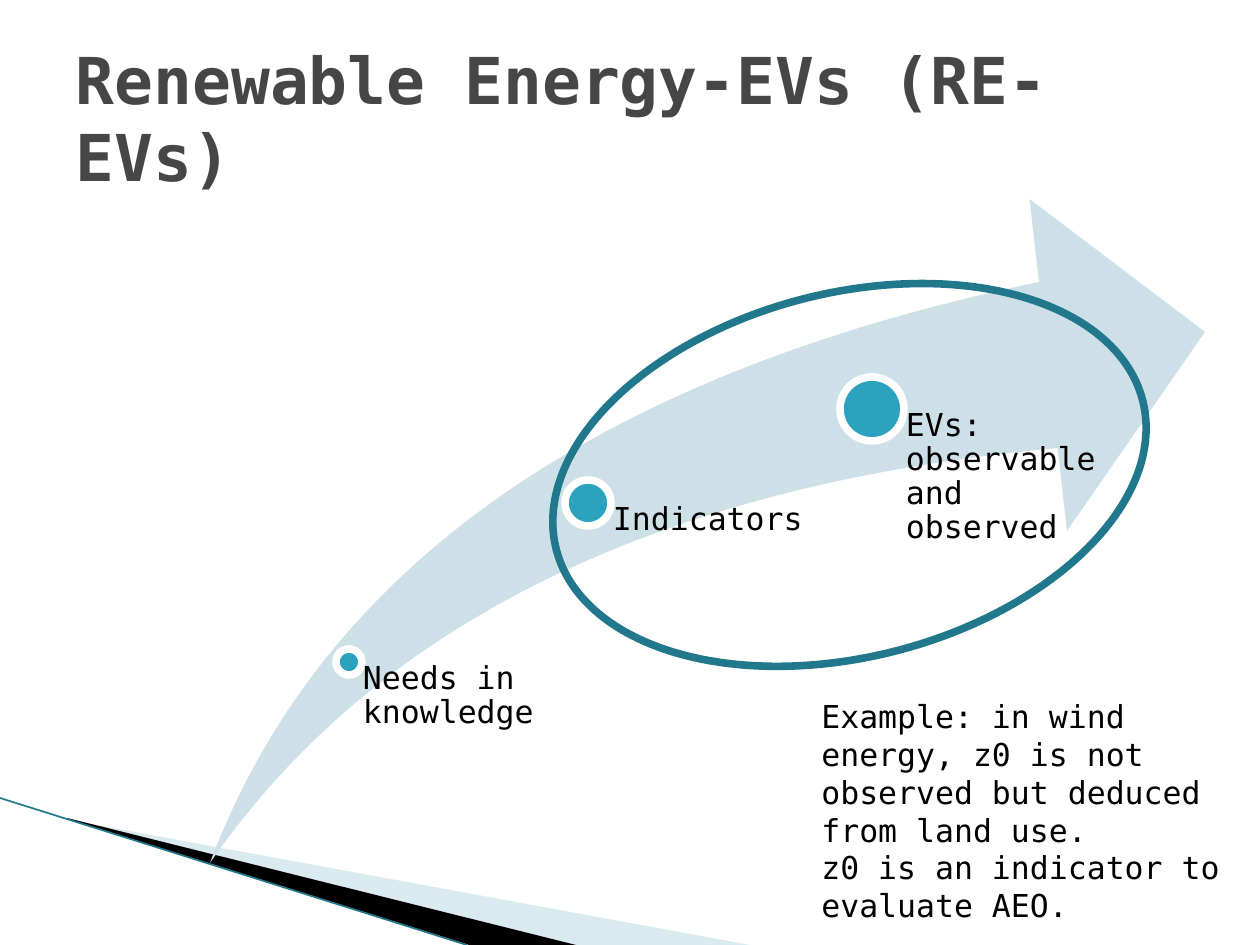
from dataclasses import dataclass
from lxml.etree import SubElement
from pptx import Presentation
from pptx.dml.color import RGBColor
from pptx.enum.shapes import MSO_CONNECTOR, MSO_SHAPE
from pptx.enum.text import MSO_ANCHOR, MSO_AUTO_SIZE, PP_ALIGN
from pptx.oxml.ns import qn
from pptx.util import Pt

PX = 9144000 / 1260


@dataclass(frozen=True)
class Theme:
    font: str = "DejaVu Sans Mono"
    title: str = "464646"
    text: str = "000000"
    pale: str = "A0CBDC"
    swoosh: str = "CDE0E8"
    accent: str = "2DA2BF"
    ring: str = "21788D"
    white: str = "FFFFFF"
    title_size: float = 36.9
    body_size: float = 18
    outline: float = 4.33
    hairline: float = 0.95


T = Theme()


def px(*values):
    return [round(v * PX) for v in values]


def add_run(p, text, size=T.body_size, color=T.text, bold=False):
    r = p.add_run()
    r.text = text
    r.font.name = T.font
    r.font.size = Pt(size)
    r.font.bold = bold
    r.font.color.rgb = RGBColor.from_string(color)


prs = Presentation()
prs.slide_width, prs.slide_height = px(1260, 945)
s = prs.slides.add_slide(prs.slide_layouts[5])

wedges = [
    ([(69, 820), (750, 945), (575, 945), (69, 819)], T.pale, 40),
    ([(67, 818), (576, 945), (469, 945), (68, 819)], T.text, 100),
]
for points, color, opacity in wedges:
    fb = s.shapes.build_freeform(*points[0], scale=PX)
    fb.add_line_segments(points[1:], close=True)
    sp = fb.convert_to_shape()
    sp.shadow.inherit = False
    sp.fill.solid()
    sp.fill.fore_color.rgb = RGBColor.from_string(color)
    sp.line.fill.background()
    if opacity < 100:
        clr = next(sp.element.spPr.iter(qn("a:srgbClr")))
        SubElement(clr, qn("a:alpha")).set("val", str(opacity * 1000))

edge = s.shapes.add_connector(MSO_CONNECTOR.STRAIGHT, *px(0, 798, 467, 945))
edge.line.color.rgb = RGBColor.from_string(T.ring)
edge.line.width = Pt(T.hairline)
SubElement(edge.element.spPr, qn("a:effectLst"))

title = s.shapes.title
title.left, title.top, title.width, title.height = px(63, 38, 1134, 158)
tf = title.text_frame
tf.word_wrap = True
tf.auto_size = MSO_AUTO_SIZE.NONE
tf.vertical_anchor = MSO_ANCHOR.MIDDLE
p = tf.paragraphs[0]
p.alignment = PP_ALIGN.LEFT
add_run(p, "Renewable Energy-EVs (RE-EVs)", T.title_size, T.title, True)

swoosh = s.shapes.add_shape(MSO_SHAPE.SWOOSH_ARROW, *px(210, 199, 995, 664))
swoosh.adjustments[0] = 0.25
swoosh.adjustments[1] = 0.25
swoosh.shadow.inherit = False
swoosh.fill.solid()
swoosh.fill.fore_color.rgb = RGBColor.from_string(T.swoosh)
swoosh.line.fill.background()

stages = [
    ("Needs in knowledge", 349, 662, 26, 232, 14),
    ("Indicators", 588, 503, 46, 239, 25),
    ("EVs: observable and observed", 872, 409, 64, 239, 34),
]
for text, cx, cy, d, width, inset in stages:
    dot = s.shapes.add_shape(MSO_SHAPE.OVAL, *px(cx - d / 2, cy - d / 2, d, d))
    dot.shadow.inherit = False
    dot.fill.solid()
    dot.fill.fore_color.rgb = RGBColor.from_string(T.accent)
    dot.line.color.rgb = RGBColor.from_string(T.white)
    dot.line.width = Pt(T.outline)

    tb = s.shapes.add_textbox(*px(cx, cy, width, 843 - cy))
    tf = tb.text_frame
    tf.word_wrap = True
    tf.margin_left = px(inset)[0]
    tf.margin_top = tf.margin_right = tf.margin_bottom = 0
    p = tf.paragraphs[0]
    p.line_spacing = 0.9
    add_run(p, text)

ring = s.shapes.add_shape(MSO_SHAPE.OVAL, *px(547, 293, 605, 364))
ring.rotation = 345.8
ring.shadow.inherit = False
ring.fill.background()
ring.line.color.rgb = RGBColor.from_string(T.ring)
ring.line.width = Pt(T.outline)

tb = s.shapes.add_textbox(*px(809, 691, 451, 204))
tf = tb.text_frame
tf.word_wrap = True
tf.auto_size = MSO_AUTO_SIZE.SHAPE_TO_FIT_TEXT
example = [
    "Example: in wind energy, z0 is not observed but deduced from land use.",
    "z0 is an indicator to evaluate AEO.",
]
for i, text in enumerate(example):
    p = tf.add_paragraph() if i else tf.paragraphs[0]
    add_run(p, text)

prs.save("out.pptx")
